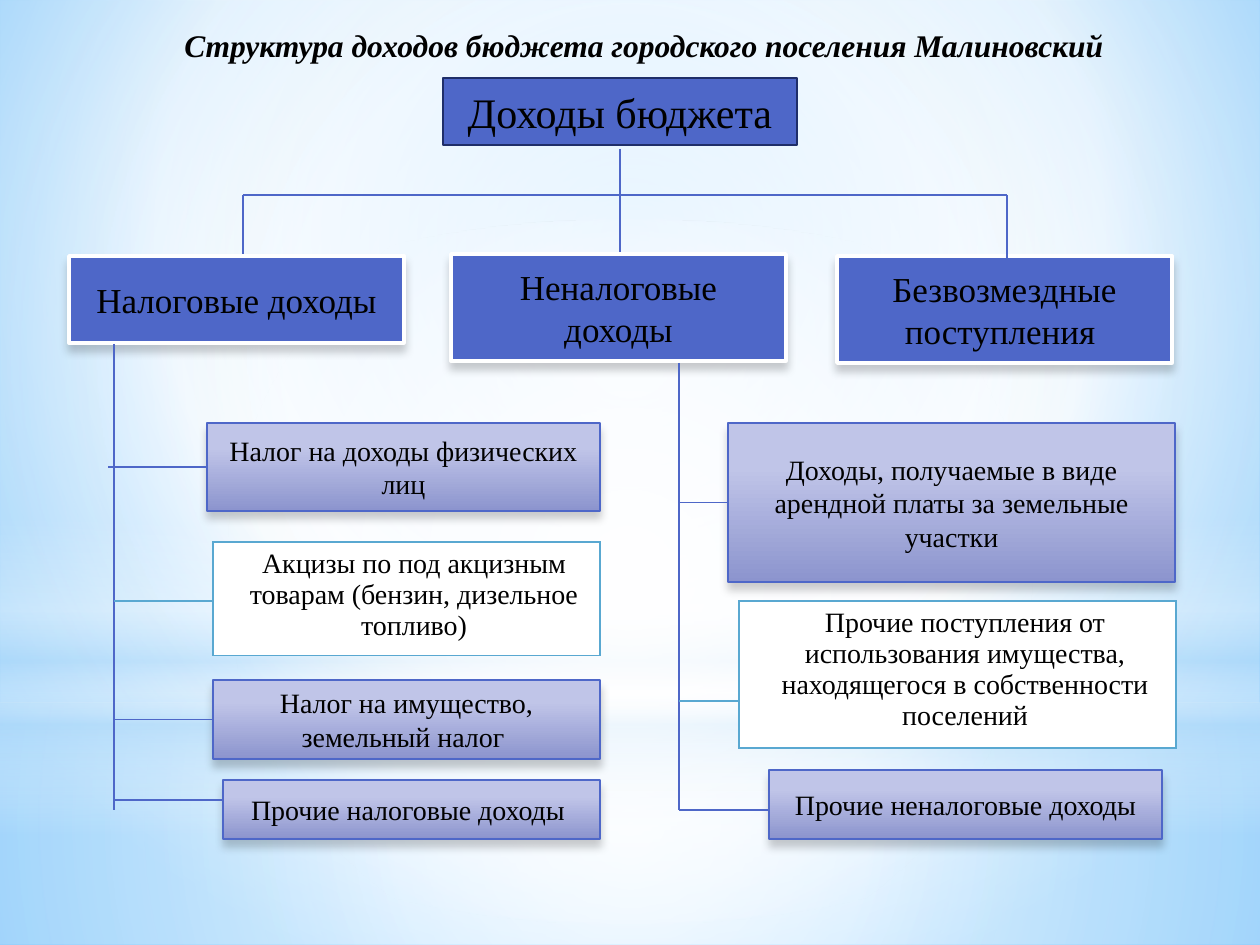
import pptx
import pptx.dml.color
import pptx.enum.shapes
import pptx.enum.text
import pptx.oxml
import pptx.oxml.ns
import pptx.util

FONT = "Times New Roman"
BLUE, NAVY, SKY, WHITE, BLACK = "4E67C8", "1F2E69", "59A8D1", "FFFFFF", "000000"
PALE = "B4DCFA"
CENTRE = (50, 50, 50, 50)

# Gradient stops: position %, colour, opacity %
BACKGROUND = [(0, "9ED5FF", 100), (60, WHITE, 100), (100, "5BB9FF", 100)]
LEAF_FILL = [(28, "C0C5E8", 100), (100, "8C94CE", 100)]
# Backdrop: shape, left, top, width, height, stops, path focus (None = vertical)
BACKDROP = [
    ("RECTANGLE", 0, 703, 1260, 242, [(0, WHITE, 91), (37, WHITE, 76), (100, PALE, 79)], CENTRE),
    ("RECTANGLE", 0, 0, 1260, 703, [(0, WHITE, 89), (48, WHITE, 62), (100, PALE, 79)], CENTRE),
    ("RECTANGLE", 0, 519, 1260, 315,
     [(0, WHITE, 0), (29, WHITE, 30), (45, PALE, 40), (55, WHITE, 26), (65, PALE, 60),
      (100, WHITE, 0)], None),
    ("OVAL", 0, 220, 1260, 703, [(0, WHITE, 100), (56, WHITE, 0)], CENTRE),
]

TITLE = "Структура доходов бюджета городского поселения Малиновский"
ROOT = ("Доходы бюджета", 443, 78, 354, 67)
GROUPS = [
    ("Налоговые доходы", 69, 256, 335, 87),
    ("Неналоговые доходы", 451, 254, 335, 107),
    ("Безвозмездные поступления ", 837, 256, 335, 107),
]
TAX_X, NONTAX_X = 114, 679
# Text, left, top, width, height, branch end x, branch y (None = middle of left side)
LEAVES = [
    ("Налог на доходы физических лиц", 207, 423, 393, 88, 108, None),
    ("Налог на имущество, земельный налог ", 213, 680, 387, 79, TAX_X, None),
    ("Прочие неналоговые доходы", 769, 770, 393, 69, NONTAX_X, 810),
    ("Прочие налоговые доходы ", 223, 780, 377, 59, TAX_X, 800),
    ("Доходы, получаемые в виде арендной платы за земельные участки",
     728, 423, 447, 159, NONTAX_X, None),
]
TABLES = [
    ("Акцизы по под акцизным товарам (бензин, дизельное топливо)",
     213, 542, 387, 113, TAX_X, 601),
    ("Прочие поступления от использования имущества, находящегося в собственности поселений",
     739, 601, 437, 147, NONTAX_X, 701),
]
BUS_Y, ROOT_X = 195, 620
TRUNKS = [
    (243, BUS_Y, 1007, BUS_Y),
    (243, BUS_Y, 243, 254),
    (1007, BUS_Y, 1007, 265),
    (ROOT_X, 149, ROOT_X, BUS_Y),
    (ROOT_X, BUS_Y, ROOT_X, 252),
    (TAX_X, 344, TAX_X, 810),
    (NONTAX_X, 363, NONTAX_X, 810),
]


def px(*values):
    return [round(v * 914400 / 126) for v in values]


def rgb(value):
    return pptx.dml.color.RGBColor.from_string(value)


def add_xml(parent, xml):
    """Append an element, given as XML text whose root tag ends with {ns}."""
    parent.append(pptx.oxml.parse_xml(xml.replace("{ns}", pptx.oxml.ns.nsdecls("a"))))


def set_gradient(fill, element, stops, focus=None):
    """Fill with a circular gradient around focus, or a vertical one without it."""
    fill.gradient()
    grad = element.find(".//" + pptx.oxml.ns.qn("a:gradFill"))
    grad.clear()
    items = "".join(
        f'<a:gs pos="{pos * 1000}"><a:srgbClr val="{color}">'
        f'<a:alpha val="{alpha * 1000}"/></a:srgbClr></a:gs>' for pos, color, alpha in stops)
    add_xml(grad, "<a:gsLst {ns}>" + items + "</a:gsLst>")
    if focus:
        l, t, r, b = (v * 1000 for v in focus)
        add_xml(grad, '<a:path {ns} path="circle">'
                f'<a:fillToRect l="{l}" t="{t}" r="{r}" b="{b}"/></a:path>')
    else:
        add_xml(grad, '<a:lin {ns} ang="5400000" scaled="0"/>')


def set_text(tf, text, size, bold=False):
    tf.text = text
    p = tf.paragraphs[0]
    p.alignment = pptx.enum.text.PP_ALIGN.CENTER
    font = p.runs[0].font
    font.name, font.size, font.color.rgb = FONT, pptx.util.Pt(size), rgb(BLACK)
    font.bold = font.italic = bold
    return p


def add_box(slide, text, x, y, w, h, size, line, width, stops=None, shadow=True):
    sp = slide.shapes.add_shape(pptx.enum.shapes.MSO_SHAPE.RECTANGLE, *px(x, y, w, h))
    if stops:
        set_gradient(sp.fill, sp._element, stops)
    else:
        sp.fill.solid()
        sp.fill.fore_color.rgb = rgb(BLUE)
    sp.line.color.rgb = rgb(line)
    sp.line.width = pptx.util.Pt(width)
    sp.shadow.inherit = False
    if shadow:
        effects = sp._element.spPr.find(pptx.oxml.ns.qn("a:effectLst"))
        add_xml(effects, '<a:outerShdw {ns} blurRad="63500" dist="50800" dir="5400000" '
                'rotWithShape="0"><a:srgbClr val="000000"><a:alpha val="20000"/>'
                '</a:srgbClr></a:outerShdw>')
    sp.text_frame.word_wrap = True
    sp.text_frame.vertical_anchor = pptx.enum.text.MSO_ANCHOR.MIDDLE
    set_text(sp.text_frame, text, size)
    return sp


def add_line(slide, x1, y1, x2, y2, color=BLUE):
    line = slide.shapes.add_connector(
        pptx.enum.shapes.MSO_CONNECTOR.STRAIGHT, *px(x1, y1, x2, y2))
    line.line.color.rgb = rgb(color)
    line.line.width = pptx.util.Pt(0.75)
    add_xml(line._element.spPr, "<a:effectLst {ns}/>")
    return line


def add_cell_table(slide, text, x, y, w, h):
    """Add a one-cell table with a thin border."""
    cell = slide.shapes.add_table(1, 1, *px(x, y, w, h)).table.cell(0, 0)
    tc_pr = cell._tc.get_or_add_tcPr()
    for side in "LRTB":
        add_xml(tc_pr, f'<a:ln{side} {{ns}} w="12700"><a:solidFill>'
                f'<a:srgbClr val="{SKY}"/></a:solidFill></a:ln{side}>')
    cell.fill.solid()
    cell.fill.fore_color.rgb = rgb(WHITE)
    p = set_text(cell.text_frame, text, 16)
    p.space_before = pptx.util.Pt(4)
    p._p.get_or_add_pPr().set("marL", str(pptx.util.Inches(0.12)))


def main():
    prs = pptx.Presentation()
    prs.slide_width, prs.slide_height = px(1260, 945)
    slide = prs.slides.add_slide(prs.slide_layouts[6])
    set_gradient(slide.background.fill, slide._element, BACKGROUND, (20, 10, 20, 60))
    for kind, x, y, w, h, stops, focus in BACKDROP:
        sp = slide.shapes.add_shape(
            getattr(pptx.enum.shapes.MSO_SHAPE, kind), *px(x, y, w, h))
        set_gradient(sp.fill, sp._element, stops, focus)
        sp.line.fill.background()
        sp.shadow.inherit = False

    add_box(slide, *ROOT, 24, NAVY, 1.25, shadow=False)
    for group in GROUPS:
        add_box(slide, *group, 20, WHITE, 2)
    leaves = [add_box(slide, *leaf[:5], 16, BLUE, 0.75, LEAF_FILL) for leaf in LEAVES]
    for trunk in TRUNKS:
        add_line(slide, *trunk)
    for sp, (_, x, y, _, h, end_x, branch_y) in zip(leaves, LEAVES):
        line_y = branch_y or y + h / 2
        line = add_line(slide, x, line_y, end_x, line_y)
        if branch_y is None:
            line.begin_connect(sp, 1)

    title = slide.shapes.add_textbox(*px(168, 20, 952, 50))
    title.text_frame.word_wrap = False
    set_text(title.text_frame, TITLE, 18, bold=True)
    for text, x, y, w, h, end_x, branch_y in TABLES:
        add_cell_table(slide, text, x, y, w, h)
        add_line(slide, end_x, branch_y, x, branch_y, SKY)
    prs.save("out.pptx")


if __name__ == "__main__":
    main()
